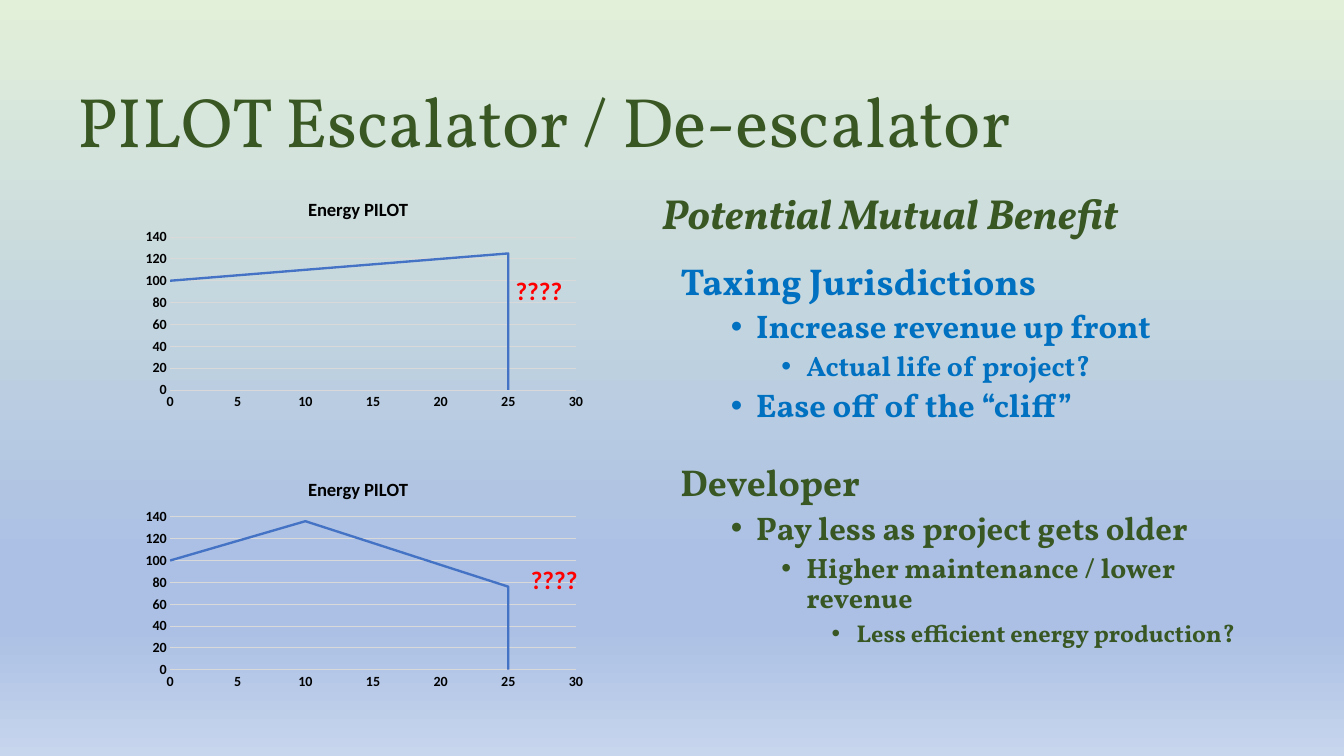
from pptx import Presentation
from pptx.chart.data import XyChartData
from pptx.dml.color import RGBColor
from pptx.enum.chart import XL_CHART_TYPE as ChartType, XL_TICK_MARK as Tick
from pptx.enum.text import MSO_ANCHOR as Anchor, MSO_AUTO_SIZE as AutoSize, PP_ALIGN as Align
from pptx.oxml import parse_xml
from pptx.oxml.ns import nsdecls, qn
from pptx.util import Cm, Pt

# Content
COLORS = {"green": "385723", "blue": "0070C0", "red": "FF0000", "black": "000000",
          "line": "4472C4", "grid": "D9D9D9"}
BACKGROUND = [(0, "E2F0D9"), (74, "ABC0E4"), (83, "ABC0E4"), (100, "C7D5ED")]
SERIF, SANS = "Vollkorn", "Calibri"
TITLE = "PILOT Escalator / De-escalator"
HEADING = "Potential Mutual Benefit"
YEARS = [0, 5, 10, 15, 20, 25, 25]
CHARTS = [  # top in cm, payments
    (5.26, [100, 105, 110, 115, 120, 125, 0]),
    (13.72, [100, 118, 136, 116, 96, 76, 0]),
]
QUESTIONS = [(15.34, 8.2), (15.8, 16.94)]  # left and top in cm
LISTS = [  # box in cm, colour, (level, text)
    ((20.32, 7.82, 15.42, 5.56), "blue", [
        (0, "Taxing Jurisdictions"),
        (1, "Increase revenue up front"),
        (2, "Actual life of project?"),
        (1, "Ease off of the “cliff”")]),
    ((20.32, 13.92, 17.91, 7.26), "green", [
        (0, "Developer"),
        (1, "Pay less as project gets older"),
        (2, "Higher maintenance / lower revenue"),
        (3, "Less efficient energy production?")]),
]
LEVEL_SIZES = [32, 28, 24, 20.8]


def style(font, size, color, name, bold=False, italic=False):
    font.size, font.name, font.bold, font.italic = Pt(size), name, bold, italic
    font.color.rgb = RGBColor.from_string(COLORS[color])


def place(shape, left, top, width, height):
    shape.left, shape.top, shape.width, shape.height = map(Cm, (left, top, width, height))


def add_text(para, text, *look, **flags):
    span = para.add_run()
    span.text = text
    style(span.font, *look, **flags)


def add_box(left, top, width, height):
    box = page.shapes.add_textbox(Cm(left), Cm(top), Cm(width), Cm(height))
    box.text_frame.word_wrap = True
    return box.text_frame.paragraphs[0]


def set_bullet(para, level):
    props = para._p.get_or_add_pPr()
    if level == 0:
        props.set("marL", "0")
        props.set("indent", "0")
        props.append(parse_xml(f"<a:buNone {nsdecls('a')}/>"))
        return
    props.set("marL", str(Cm(2.29 + 1.52 * (level - 1))))
    props.set("indent", str(-Cm(0.76)))
    props.append(parse_xml(f'<a:buFont {nsdecls("a")} typeface="Arial"/>'))
    props.append(parse_xml(f'<a:buChar {nsdecls("a")} char="•"/>'))


def manual_layout(target, **parts):
    inner = '<c:layoutTarget val="inner"/>' if "w" in parts else ""
    inner += '<c:xMode val="edge"/><c:yMode val="edge"/>'
    inner += "".join(f'<c:{key} val="{value}"/>' for key, value in parts.items())
    for old in target.findall(qn("c:layout")):
        target.remove(old)
    layout = parse_xml(f"<c:layout {nsdecls('c')}><c:manualLayout>{inner}"
                       "</c:manualLayout></c:layout>")
    text = target.find(qn("c:tx"))
    if text is None:
        target.insert(0, layout)
    else:
        text.addnext(layout)


def format_axis(axis, maximum, step):
    axis.minimum_scale, axis.maximum_scale, axis.major_unit = 0, maximum, step
    axis.major_tick_mark = axis.minor_tick_mark = Tick.NONE
    style(axis.tick_labels.font, 12, "black", SANS, bold=True)


def format_line(line, color, width):
    line.color.rgb = RGBColor.from_string(COLORS[color])
    line.width = Pt(width)


def add_pilot_chart(top, payments):
    data = XyChartData()
    series = data.add_series("Series 1")
    for year, payment in zip(YEARS, payments):
        series.add_data_point(year, payment)
    chart = page.shapes.add_chart(ChartType.XY_SCATTER_LINES_NO_MARKERS, Cm(4.11), Cm(top),
                                  Cm(13.79), Cm(7.26), data).chart
    style(chart.font, 10, "black", SANS)
    chart.has_legend = False
    chart.has_title = True
    add_text(chart.chart_title.text_frame.paragraphs[0], "Energy PILOT",
             16, "black", SANS, bold=True)
    manual_layout(chart.chart_title._element, x=0.37, y=0.08)
    manual_layout(chart._chartSpace.chart.plotArea, x=0.075, y=0.263, w=0.89, h=0.637)
    chart.plots[0].vary_by_categories = False
    line = chart.plots[0].series[0]
    line.smooth = False
    format_line(line.format.line, "line", 2)
    years, amounts = chart.category_axis, chart.value_axis
    format_axis(years, 30, 5)
    format_axis(amounts, 140, 20)
    years.has_major_gridlines = False
    format_line(years.format.line, "grid", 0.75)
    amounts.has_major_gridlines = True
    format_line(amounts.major_gridlines.format.line, "grid", 0.75)
    amounts.format.line.fill.background()


deck = Presentation()
deck.slide_width, deck.slide_height = Cm(40.64), Cm(22.86)
page = deck.slides.add_slide(deck.slide_layouts[3])

# Gradient background
fill = page.background.fill
fill.gradient()
fill.gradient_angle = 270
stops = page._element.find(".//" + qn("a:gsLst"))
for stop in list(stops):
    stops.remove(stop)
for percent, color in BACKGROUND:
    stops.append(parse_xml(f'<a:gs {nsdecls("a")} pos="{percent * 1000}">'
                           f'<a:srgbClr val="{color}"/></a:gs>'))

# Title
title = page.shapes.title
place(title, 2.08, 1.7, 36.47, 3.81)
title.text_frame.vertical_anchor = Anchor.MIDDLE
title.text_frame.auto_size = AutoSize.NONE
title_para = title.text_frame.paragraphs[0]
title_para.alignment = Align.LEFT
add_text(title_para, TITLE, 60, "green", SERIF)

# Charts
for top, payments in CHARTS:
    add_pilot_chart(top, payments)

# Lists
for index, (bounds, color, items) in enumerate(LISTS, 1):
    body = page.placeholders[index]
    place(body, *bounds)
    frame = body.text_frame
    frame.auto_size = AutoSize.NONE
    frame.vertical_anchor = Anchor.TOP
    for number, (level, text) in enumerate(items):
        para = frame.add_paragraph() if number else frame.paragraphs[0]
        set_bullet(para, level)
        para.level = level
        para.line_spacing = 0.9
        para.space_before = Pt(6 if number else 0)
        add_text(para, text, LEVEL_SIZES[level], color, SERIF, bold=True)

# Heading and chart questions
heading = add_box(19.76, 5.72, 16.54, 2.11)
heading.line_spacing = 0.9
add_text(heading, HEADING, 36, "green", SERIF, bold=True, italic=True)
for left, top in QUESTIONS:
    add_text(add_box(left, top, 2.46, 1.17), "????", 21.6, "red", SANS, bold=True)

deck.save("out.pptx")
